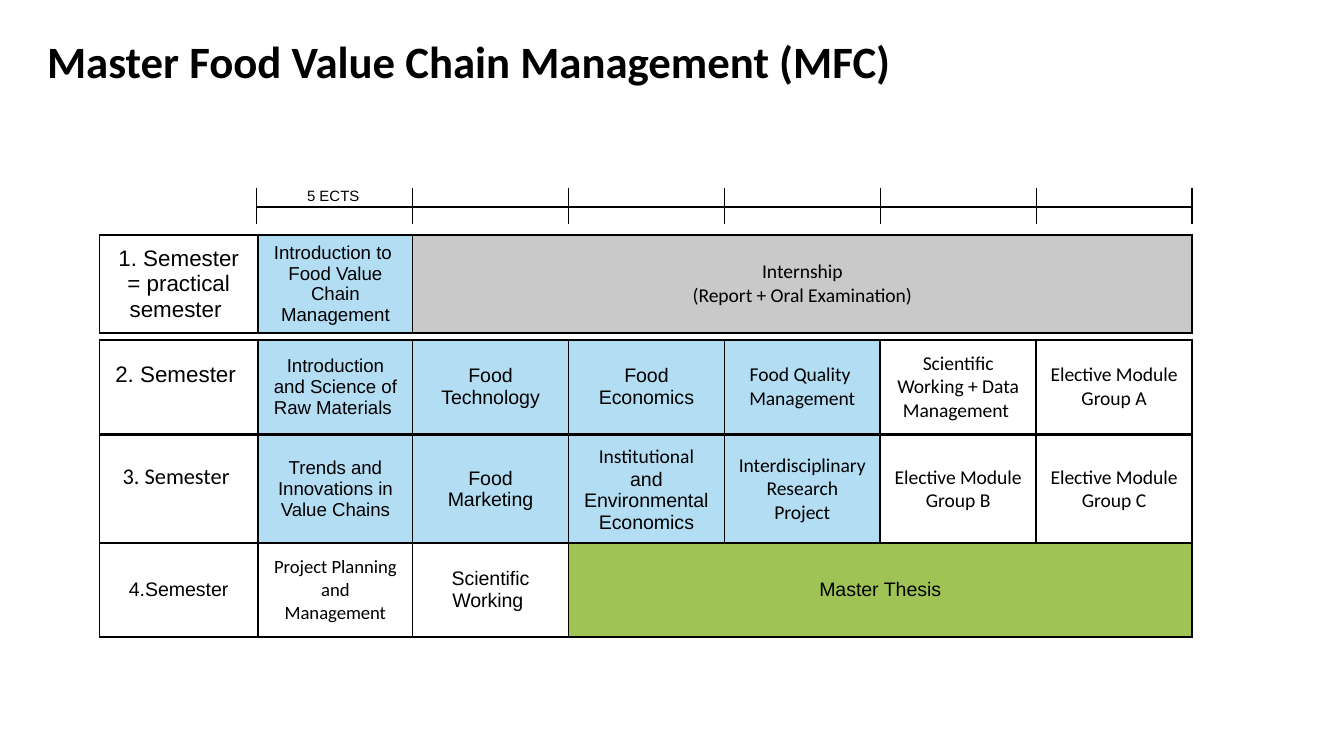
from lxml import etree
from pptx import Presentation
from pptx.dml.color import RGBColor
from pptx.enum.shapes import MSO_CONNECTOR
from pptx.enum.text import MSO_ANCHOR, MSO_AUTO_SIZE, PP_ALIGN
from pptx.oxml.ns import qn
from pptx.util import Inches, Pt

CENTER, LEFT = PP_ALIGN.CENTER, PP_ALIGN.LEFT
MIDDLE, TOP = MSO_ANCHOR.MIDDLE, MSO_ANCHOR.TOP
STRAIGHT, NO_FIT = MSO_CONNECTOR.STRAIGHT, MSO_AUTO_SIZE.NONE
BLACK, WHITE, BLUE, GRAY, GREEN = "000000", "FFFFFF", "B3DDF2", "C9C9C9", "9FC455"
ARIAL, CALIBRI = "Arial", "Calibri"

TITLE = "Master Food Value Chain Management (MFC)"
CREDITS = "5 ECTS"
SEMESTERS = [
    {"top": 1.75, "height": 0.72, "lift": 0, "cells": [
        (1, None, 12, [[("1. Semester = practical semester ", ARIAL)]]),
        (1, BLUE, 10, [[("Introduction to ", ARIAL)], [("Food Value Chain", ARIAL)],
                       [("Management", ARIAL)]]),
        (5, GRAY, 10.5, [[("Internship", CALIBRI)],
                         [("(Report + Oral Examination)", CALIBRI)]])]},
    {"top": 2.53, "height": 0.7, "lift": 0.18, "cells": [
        (1, None, 12, [[("2. Semester ", ARIAL)]]),
        (1, BLUE, 10, [[("Introduction and Science of Raw Materials ", ARIAL)]]),
        (1, BLUE, 10.5, [[("Food Technology", ARIAL)]]),
        (1, BLUE, 10.5, [[("Food Economics", ARIAL)]]),
        (1, BLUE, 10.5, [[("Food Quality ", CALIBRI)], [("Management", CALIBRI)]]),
        (1, WHITE, 10.5, [[("Scientific Working + Data Management ", CALIBRI)]]),
        (1, WHITE, 10.5, [[("Elective Module Group A", CALIBRI)]])]},
    {"top": 3.24, "height": 0.8, "lift": 0.18, "cells": [
        (1, None, 12, [[("3. Semester ", CALIBRI)]]),
        (1, BLUE, 10, [[("Trends and Innovations in Value Chains", ARIAL)]]),
        (1, BLUE, 10.5, [[("Food Marketing", ARIAL)]]),
        (1, BLUE, 10.5, [[("Institutional ", CALIBRI),
                          ("and Environmental Economics", ARIAL)]]),
        (1, BLUE, 10.5, [[("Interdisciplinary Research Project", CALIBRI)]]),
        (1, WHITE, 10.5, [[("Elective Module Group B", CALIBRI)]]),
        (1, WHITE, 10.5, [[("Elective Module Group C", CALIBRI)]])]},
    {"top": 4.04, "height": 0.7, "lift": 0, "cells": [
        (1, None, 10.5, [[("4.Semester", ARIAL)]]),
        (1, WHITE, 10, [[("Project Planning and Management", CALIBRI)]]),
        (1, WHITE, 10.5, [[("Scientific Working ", ARIAL)]]),
        (4, GREEN, 10.5, [[("Master Thesis", ARIAL)]])]},
]

GRID_LEFT = 0.74
MODULE = 1.16
COLUMNS = [1.18, 1.15] + [MODULE] * 5
CELL_PAD = 0.03
SCALE_LEFT, SCALE_TOP, SCALE_MIDDLE, SCALE_BOTTOM = 1.91, 1.4, 1.54, 1.67
MODULE_COUNT = 6


def color(value):
    return RGBColor.from_string(value)


def style(span, font, size, bold=False):
    span.font.name = font
    span.font.size = Pt(size)
    span.font.bold = bold
    span.font.color.rgb = color(BLACK)


def add_line(slide, x1, y1, x2, y2):
    line = slide.shapes.add_connector(
        STRAIGHT, Inches(x1), Inches(y1), Inches(x2), Inches(y2))
    line.line.color.rgb = color(BLACK)
    line.line.width = Pt(0.75)
    etree.SubElement(line._element.spPr, qn("a:effectLst"))


def add_borders(cell):
    properties = cell._tc.get_or_add_tcPr()
    for side in ("a:lnL", "a:lnR", "a:lnT", "a:lnB"):
        border = etree.SubElement(properties, qn(side), w=str(Pt(1)))
        fill = etree.SubElement(border, qn("a:solidFill"))
        etree.SubElement(fill, qn("a:srgbClr"), val=BLACK)


def fill_cell(cell, fill, size, lines):
    add_borders(cell)
    if fill:
        cell.fill.solid()
        cell.fill.fore_color.rgb = color(fill)
    else:
        cell.fill.background()
    cell.vertical_anchor = MIDDLE
    cell.margin_top = cell.margin_bottom = Inches(CELL_PAD)
    frame = cell.text_frame
    for index, line in enumerate(lines):
        para = frame.add_paragraph() if index else frame.paragraphs[0]
        para.alignment = CENTER
        for text, font in line:
            span = para.add_run()
            span.text = text
            style(span, font, size)


def add_semester(slide, semester):
    cells = semester["cells"]
    table = slide.shapes.add_table(
        1, len(cells), Inches(GRID_LEFT), Inches(semester["top"]),
        Inches(sum(COLUMNS)), Inches(semester["height"])).table
    table.first_row = table.horz_banding = False
    start = 0
    for index, (columns, fill, size, lines) in enumerate(cells):
        table.columns[index].width = Inches(sum(COLUMNS[start:start + columns]))
        fill_cell(table.cell(0, index), fill, size, lines)
        start += columns
    table.cell(0, 0).margin_bottom = Inches(CELL_PAD + semester["lift"])


def add_scale(slide):
    right = SCALE_LEFT + MODULE * MODULE_COUNT
    add_line(slide, SCALE_LEFT, SCALE_MIDDLE, right, SCALE_MIDDLE)
    for index in range(MODULE_COUNT + 1):
        x = SCALE_LEFT + MODULE * index
        add_line(slide, x, SCALE_BOTTOM, x, SCALE_TOP)
    box = slide.shapes.add_textbox(Inches(2.18), Inches(1.34), Inches(0.6), Inches(0.24))
    box.text_frame.word_wrap = False
    box.text_frame.text = CREDITS
    para = box.text_frame.paragraphs[0]
    para.alignment = CENTER
    style(para.runs[0], ARIAL, 8)


def add_title(slide):
    title = slide.shapes.title
    title.left, title.top = Inches(0.35), Inches(0.25)
    title.width, title.height = Inches(8.13), Inches(0.49)
    frame = title.text_frame
    frame.text = TITLE
    frame.auto_size = NO_FIT
    frame.vertical_anchor = TOP
    frame.margin_left = frame.margin_right = frame.margin_top = frame.margin_bottom = 0
    para = frame.paragraphs[0]
    para.alignment = LEFT
    style(para.runs[0], CALIBRI, 24, True)


def main():
    deck = Presentation()
    deck.slide_width = Inches(10)
    deck.slide_height = deck.slide_width * 9 // 16
    slide = deck.slides.add_slide(deck.slide_layouts[5])
    add_title(slide)
    add_scale(slide)
    for semester in SEMESTERS:
        add_semester(slide, semester)
    deck.save("out.pptx")


if __name__ == "__main__":
    main()
